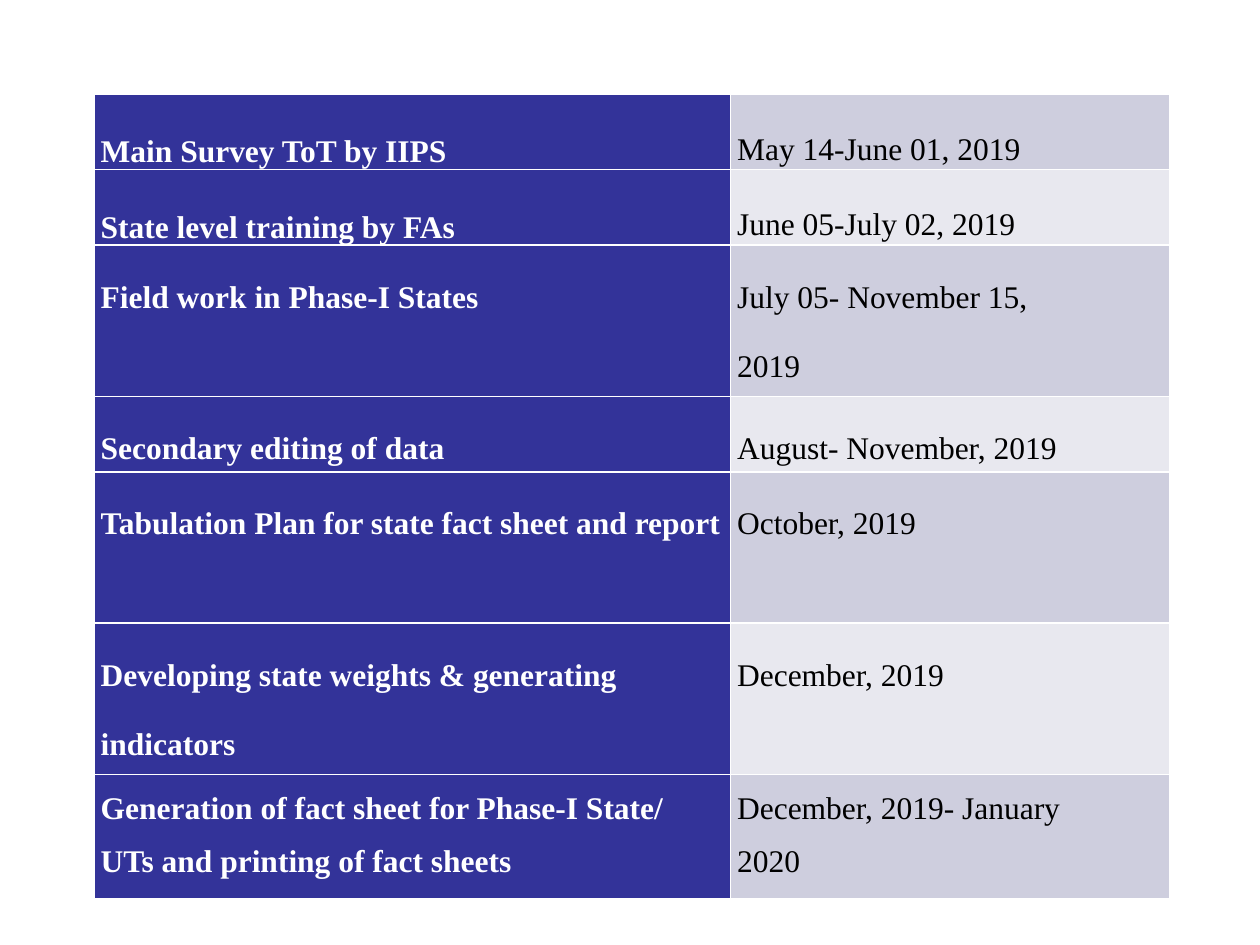
"""Build a survey timetable slide with activities and their dates."""
from dataclasses import dataclass

from lxml.etree import SubElement
from pptx import Presentation
from pptx.dml.color import RGBColor as RGB
from pptx.enum.text import MSO_ANCHOR as Anchor
from pptx.oxml.ns import qn
from pptx.util import Cm, Pt


@dataclass(frozen=True)
class Theme:
    font: str = "Times New Roman"
    size: int = 18
    activity_fill: str = "333399"
    activity_text: str = "FFFFFF"
    date_fills: tuple = ("CECEDE", "E8E8EF")
    date_text: str = "000000"
    border: str = "FFFFFF"
    border_width: int = 1


def add_borders(cell, color, width):
    properties = cell._tc.get_or_add_tcPr()
    for side in ("lnL", "lnR", "lnT", "lnB"):
        line = SubElement(properties, qn(f"a:{side}"), w=str(Pt(width)))
        fill = SubElement(line, qn("a:solidFill"))
        SubElement(fill, qn("a:srgbClr"), val=color)


theme = Theme()
schedule = [
    ("Main Survey ToT by IIPS", "May 14-June 01, 2019", 1.52, 2.0),
    ("State level training by FAs", "June 05-July 02, 2019", 1.52, 2.0),
    ("Field work in Phase-I States", "July 05- November 15, 2019", 3.05, 2.0),
    ("Secondary editing of data", "August- November, 2019", 1.52, 2.0),
    ("Tabulation Plan for state fact sheet and report", "October, 2019", 3.05, 2.0),
    ("Developing state weights & generating indicators", "December, 2019", 3.05, 2.0),
    ("Generation of fact sheet for Phase-I State/ UTs and printing of fact sheets",
     "December, 2019- January 2020", 2.51, 1.5),
]
column_widths = (12.83, 8.86)
right_margins = (0.13, 1.8)
centred_rows = 2

presentation = Presentation()
presentation.slide_width, presentation.slide_height = Cm(25.4), Cm(19.05)
slide = presentation.slides.add_slide(presentation.slide_layouts[6])

table = slide.shapes.add_table(
    len(schedule), len(column_widths), Cm(1.9), Cm(1.9),
    Cm(sum(column_widths)), Cm(sum(row[2] for row in schedule)),
).table
for column, width in zip(table.columns, column_widths):
    column.width = Cm(width)

for row_index, (activity, dates, height, spacing) in enumerate(schedule):
    table.rows[row_index].height = Cm(height)
    date_fill = theme.date_fills[row_index % 2]
    cells = (
        (activity, theme.activity_fill, theme.activity_text, True, Anchor.BOTTOM),
        (dates, date_fill, theme.date_text, False, Anchor.MIDDLE),
    )
    for column_index, (text, fill, color, bold, anchor) in enumerate(cells):
        cell = table.cell(row_index, column_index)
        add_borders(cell, theme.border, theme.border_width)
        cell.fill.solid()
        cell.fill.fore_color.rgb = RGB.from_string(fill)
        cell.margin_left = Cm(0.13)
        cell.margin_right = Cm(right_margins[column_index])
        cell.margin_top = cell.margin_bottom = 0
        cell.vertical_anchor = anchor if row_index < centred_rows else Anchor.TOP
        cell.text_frame.text = text
        paragraph = cell.text_frame.paragraphs[0]
        paragraph.line_spacing = spacing
        font = paragraph.runs[0].font
        font.name, font.size, font.bold = theme.font, Pt(theme.size), bold
        font.color.rgb = RGB.from_string(color)

presentation.save("out.pptx")
